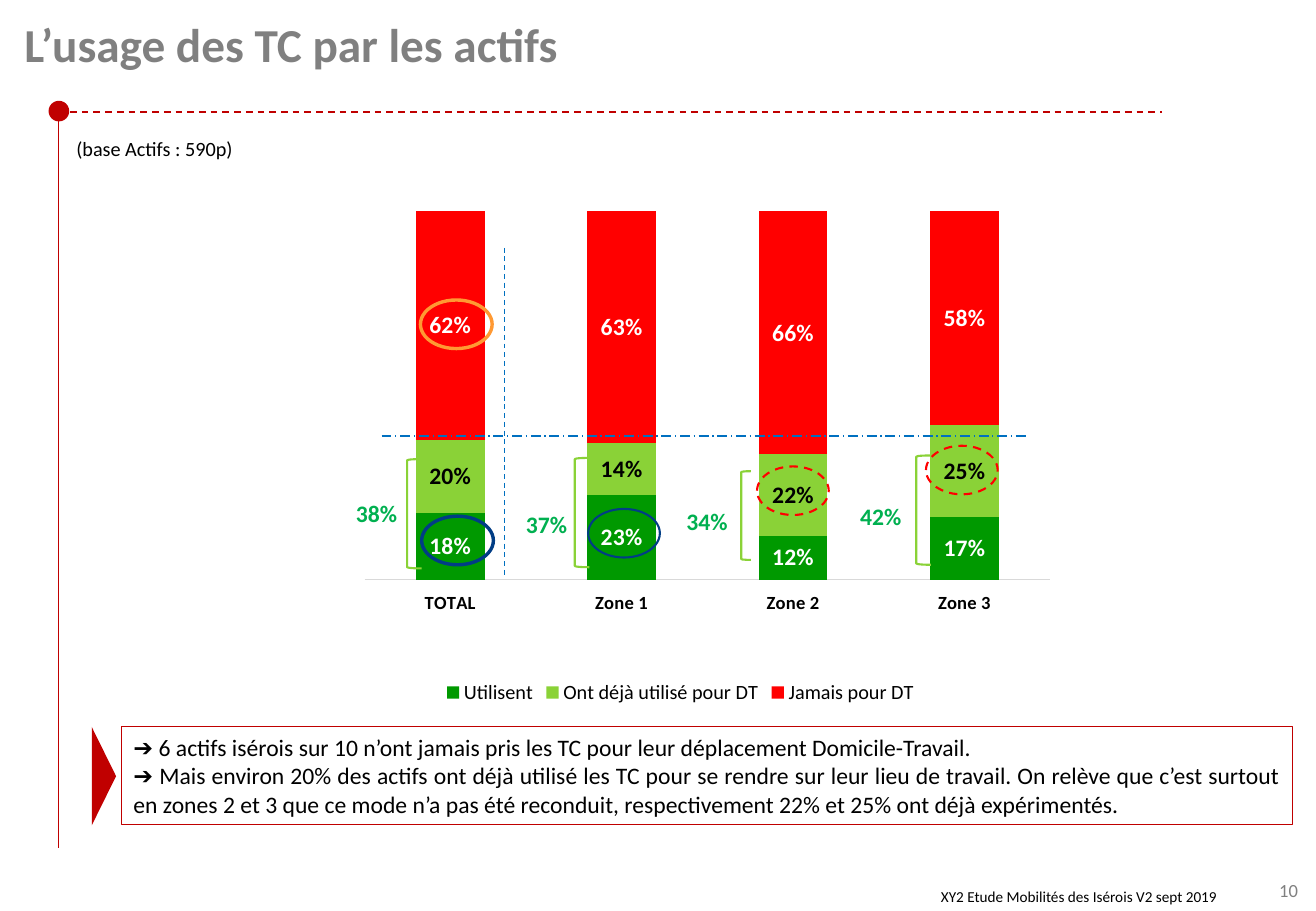
from dataclasses import dataclass

from lxml.etree import SubElement
from pptx import Presentation
from pptx.chart.data import CategoryChartData
from pptx.dml.color import RGBColor
from pptx.enum.chart import XL_CHART_TYPE as CHART, XL_LEGEND_POSITION as LEGEND, XL_TICK_LABEL_POSITION as TICK_LABEL
from pptx.enum.chart import XL_TICK_MARK as TICK
from pptx.enum.dml import MSO_LINE as DASH
from pptx.enum.shapes import MSO_CONNECTOR as CONNECTOR, MSO_SHAPE as SHAPE
from pptx.enum.text import MSO_ANCHOR as ANCHOR, MSO_AUTO_SIZE as AUTO, PP_ALIGN as ALIGN
from pptx.oxml import parse_xml
from pptx.oxml.ns import nsdecls, qn
from pptx.util import Emu, Pt

PX = 9144


@dataclass(frozen=True)
class Theme:
    """Colours, font and type sizes of the slide."""
    font: str = "Calibri"
    black: str = "000000"
    white: str = "FFFFFF"
    grey: str = "808080"
    axis: str = "D9D9D9"
    accent: str = "C00000"
    guide: str = "0070C0"
    use: str = "009900"
    tried: str = "8AD237"
    never: str = "FF0000"
    total: str = "00B050"
    navy: str = "013D85"
    orange: str = "FF9933"
    title: int = 28
    body: int = 14
    base: int = 12
    label: int = 11
    footer: int = 9


T = Theme()
CATEGORIES = ["TOTAL", "Zone 1", "Zone 2", "Zone 3"]
SERIES = [
    ("Utilisent", (0.18, 0.23, 0.12, 0.17), T.use, T.white),
    ("Ont déjà utilisé pour DT", (0.20, 0.14, 0.22, 0.25), T.tried, T.black),
    ("Jamais pour DT", (0.62, 0.63, 0.66, 0.58), T.never, T.white),
]
SUBTOTALS = [
    ("38%", (283, 406), (335, 378, 12, 90)),
    ("37%", (423, 415), (473, 377, 12, 90)),
    ("34%", (555, 412), (610, 388, 8, 73)),
    ("42%", (698, 408), (754, 375, 12, 90)),
]
HIGHLIGHTS = [
    (484, 419, T.navy, 1.25, None),
    (347, 425, T.navy, 2, None),
    (346, 247, T.orange, 2, None),
    (762, 367, T.never, 1.25, DASH.DASH),
    (623, 384, T.never, 1.25, DASH.DASH),
]
NOTES = [
    "➔ 6 actifs isérois sur 10 n’ont jamais pris les TC pour leur déplacement Domicile-Travail.",
    "➔ Mais environ 20% des actifs ont déjà utilisé les TC pour se rendre sur leur lieu de travail. "
    "On relève que c’est surtout en zones 2 et 3 que ce mode n’a pas été reconduit, "
    "respectivement 22% et 25% ont déjà expérimentés.",
]


def px(*values):
    """Turn px lengths into EMU."""
    return [Emu(v * PX) for v in values]


def style_font(font, size, color=T.black, bold=False):
    """Set the face, size, colour and weight of a font."""
    font.name, font.size, font.bold = T.font, Pt(size), bold
    font.color.rgb = RGBColor.from_string(color)


def style_line(line, color, width, dash=None):
    """Set the colour, width and dash of a line."""
    line.color.rgb = RGBColor.from_string(color)
    line.width = Pt(width)
    if dash is not None:
        line.dash_style = dash


def write(s, *texts, size=T.body, color=T.black, bold=False, align=ALIGN.LEFT,
          anchor=ANCHOR.TOP, inset=(10, 5), spacing=None):
    """Write one formatted paragraph per text into a shape."""
    tf = s.text_frame
    tf.word_wrap, tf.auto_size, tf.vertical_anchor = True, AUTO.NONE, anchor
    tf.margin_left, tf.margin_top = tf.margin_right, tf.margin_bottom = px(*inset)
    for i, text in enumerate(texts):
        p = tf.paragraphs[0] if i == 0 else tf.add_paragraph()
        p.alignment, p.line_spacing = align, spacing
        r = p.add_run()
        r.text = text
        style_font(r.font, size, color, bold)


def add_text(slide, box, text, **fmt):
    """Add a text box."""
    write(slide.shapes.add_textbox(*px(*box)), text, **fmt)


def add_shape(slide, kind, box, fill=None, line=None, width=1.25, dash=None):
    """Add a flat preset shape, filled or outlined."""
    s = slide.shapes.add_shape(kind, *px(*box))
    s.shadow.inherit = False
    if fill:
        s.fill.solid()
        s.fill.fore_color.rgb = RGBColor.from_string(fill)
    else:
        s.fill.background()
    if line:
        style_line(s.line, line, width, dash)
    else:
        s.line.fill.background()
    return s


def add_line(slide, ends, color, width=0.75, dash=None):
    """Add a straight line without shadow."""
    s = slide.shapes.add_connector(CONNECTOR.STRAIGHT, *px(*ends))
    style_line(s.line, color, width, dash)
    SubElement(s._element.spPr, qn("a:effectLst"))


def place_plot(chart, x, y, w, h):
    """Fix the inner plot area as fractions of the chart."""
    area = chart._chartSpace.chart.plotArea
    for old in area.findall(qn("c:layout")):
        area.remove(old)
    sizes = "".join(f'<c:{k} val="{v}"/>' for k, v in zip("xywh", (x, y, w, h)))
    area.insert(0, parse_xml(
        f'<c:layout {nsdecls("c")}><c:manualLayout><c:layoutTarget val="inner"/>'
        f'<c:xMode val="edge"/><c:yMode val="edge"/>{sizes}</c:manualLayout></c:layout>'))


def add_usage_chart(slide, box):
    """Add the stacked columns of public transport use."""
    data = CategoryChartData(number_format="0%")
    data.categories = CATEGORIES
    for name, values, *_ in SERIES:
        data.add_series(name, values)
    chart = slide.shapes.add_chart(CHART.COLUMN_STACKED_100, *px(*box), data).chart
    style_font(chart.font, T.label)
    chart.has_title = False
    chart.has_legend = True
    chart.legend.position, chart.legend.include_in_layout = LEGEND.BOTTOM, False
    style_font(chart.legend.font, T.base)
    plot = chart.plots[0]
    plot.gap_width, plot.overlap, plot.vary_by_categories = 150, 100, False
    for series, (_, _, fill, ink) in zip(plot.series, SERIES):
        series.format.fill.solid()
        series.format.fill.fore_color.rgb = RGBColor.from_string(fill)
        labels = series.data_labels
        labels.show_value, labels.number_format, labels.number_format_is_linked = True, "0%", False
        style_font(labels.font, T.body, ink, True)
    cats, vals = chart.category_axis, chart.value_axis
    cats.major_tick_mark, cats.tick_label_position = TICK.NONE, TICK_LABEL.LOW
    style_font(cats.tick_labels.font, T.label, bold=True)
    style_line(cats.format.line, T.axis, 0.75)
    vals.minimum_scale, vals.maximum_scale, vals.major_unit = 0, 1, 0.5
    vals.has_major_gridlines = vals.visible = False
    place_plot(chart, 0.09, 0, 0.89, 0.74)


def add_frame(slide):
    """Add the title, its rules, the footer and the page number."""
    add_line(slide, (48, 92, 956, 92), T.accent, 1, DASH.DASH)
    add_line(slide, (48, 698, 48, 100), T.accent)
    add_shape(slide, SHAPE.OVAL, (40, 83, 17, 17), fill=T.accent)
    s = slide.shapes.title
    s.left, s.top, s.width, s.height = px(20, 20, 1063, 71)
    write(s, "L’usage des TC par les actifs", size=T.title, color=T.grey, bold=True,
          inset=(0, 0), spacing=Pt(T.title))
    add_text(slide, (1039, 724, 43, 20), "10", size=T.label, color=T.grey,
             align=ALIGN.CENTER, inset=(0, 0))
    add_text(slide, (684, 726, 327, 24), "XY2 Etude Mobilités des Isérois V2 sept 2019",
             size=T.footer, align=ALIGN.RIGHT)


def main():
    """Build the slide and save it."""
    prs = Presentation()
    prs.slide_width, prs.slide_height = px(1083, 750)
    slide = prs.slides.add_slide(prs.slide_layouts[5])
    add_frame(slide)
    s = add_shape(slide, SHAPE.RECTANGLE, (100, 598, 964, 81), line=T.accent, width=0.75)
    write(s, *NOTES, align=ALIGN.JUSTIFY, anchor=ANCHOR.MIDDLE)
    add_shape(slide, SHAPE.ISOSCELES_TRIANGLE, (45, 629, 81, 20), fill=T.accent).rotation = 90
    add_text(slide, (53, 107, 947, 30), "(base Actifs : 590p)", size=T.base)
    add_usage_chart(slide, (243, 174, 634, 410))
    add_line(slide, (415, 204, 415, 474), T.guide, dash=DASH.DASH)
    add_line(slide, (314, 359, 847, 359), T.guide, dash=DASH.LONG_DASH_DOT)
    for text, corner, bracket in SUBTOTALS:
        add_shape(slide, SHAPE.LEFT_BRACKET, bracket, line=T.tried)
        add_text(slide, (*corner, 61, 34), text, color=T.total, bold=True)
    for x, y, color, width, dash in HIGHLIGHTS:
        add_shape(slide, SHAPE.OVAL, (x, y, 59, 40), line=color, width=width, dash=dash)
    prs.save("out.pptx")


if __name__ == "__main__":
    main()
